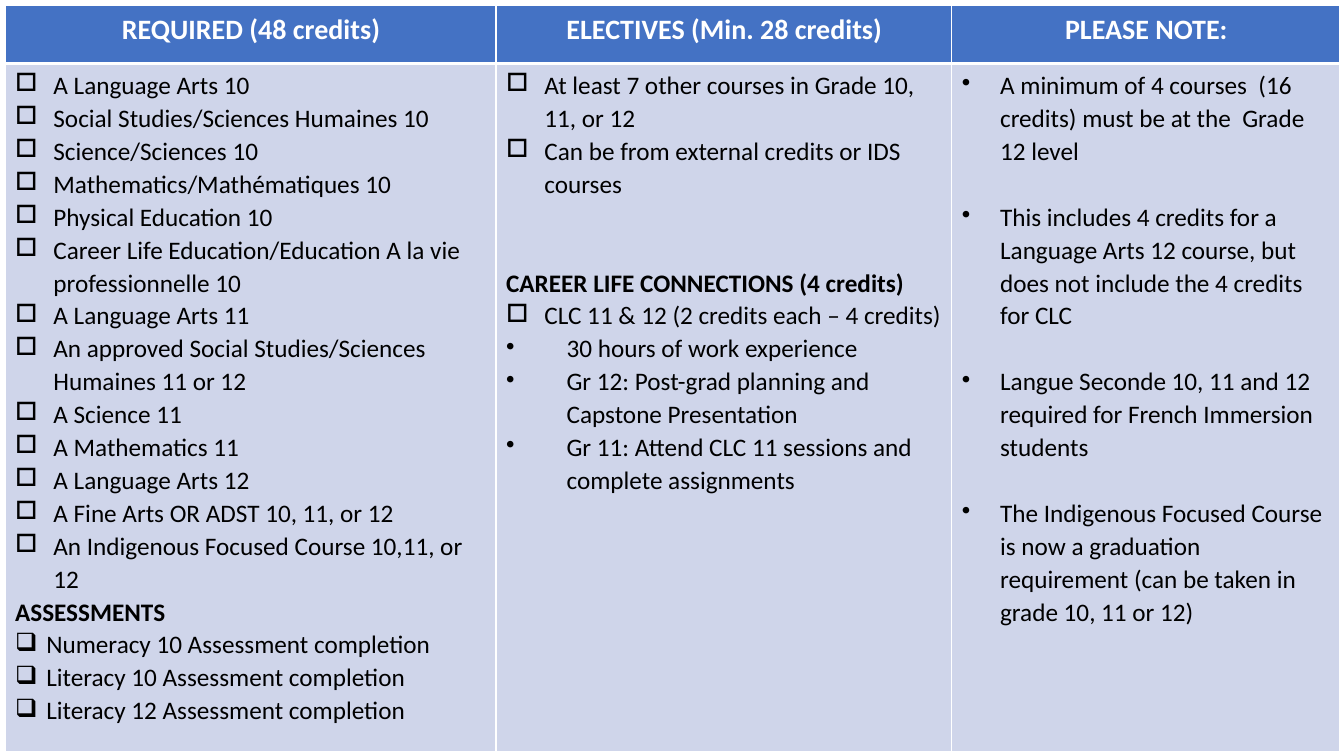
from dataclasses import dataclass

from lxml.etree import SubElement
from pptx import Presentation
from pptx.dml.color import RGBColor
from pptx.enum.text import PP_ALIGN as Align
from pptx.oxml.ns import qn
from pptx.util import Inches, Pt


@dataclass(frozen=True)
class Theme:
    font: str = "Calibri"
    header_fill: str = "4472C4"
    body_fill: str = "CFD5EA"
    header_text: str = "FFFFFF"
    body_text: str = "000000"
    border: str = "FFFFFF"
    header_size: float = 20
    body_size: float = 18
    line_spacing: float = 1.07
    blank_line: float = 23.5
    thin: float = 1
    thick: float = 3


@dataclass(frozen=True)
class Entry:
    text: str
    mark: str = ""
    indent: float = 0
    lines_before: int = 0
    bold: bool = False


THEME = Theme()


def task(text):
    return Entry(text, "□", 0.38)


def assessment(text):
    return Entry(text, "❑", 0.31)


def detail(text):
    return Entry(text, "•", 0.6)


def note(text, lines_before=1):
    return Entry(text, "•", 0.38, lines_before)


def heading(text, lines_before=0):
    return Entry(text, lines_before=lines_before, bold=True)


REQUIRED = [
    *map(task, [
        "A Language Arts 10",
        "Social Studies/Sciences Humaines 10",
        "Science/Sciences 10",
        "Mathematics/Mathématiques 10",
        "Physical Education 10",
        "Career Life Education/Education A la vie professionnelle 10",
        "A Language Arts 11",
        "An approved Social Studies/Sciences Humaines 11 or 12",
        "A Science 11",
        "A Mathematics 11",
        "A Language Arts 12",
        "A Fine Arts OR ADST 10, 11, or 12",
        "An Indigenous Focused Course 10,11, or 12",
    ]),
    heading("ASSESSMENTS"),
    *map(assessment, [
        "Numeracy 10 Assessment completion",
        "Literacy 10 Assessment completion",
        "Literacy 12 Assessment completion",
    ]),
]
ELECTIVES = [
    task("At least 7 other courses in Grade 10, 11, or 12"),
    task("Can be from external credits or IDS courses"),
    heading("CAREER LIFE CONNECTIONS (4 credits)", lines_before=2),
    task("CLC 11 & 12 (2 credits each – 4 credits)"),
    detail("30 hours of work experience"),
    detail("Gr 12: Post-grad planning and Capstone Presentation"),
    detail("Gr 11: Attend CLC 11 sessions and complete assignments"),
]
NOTES = [
    note("A minimum of 4 courses  (16 credits) must be at the  Grade 12 level", 0),
    note("This includes 4 credits for a Language Arts 12 course, "
         "but does not include the 4 credits for CLC"),
    note("Langue Seconde 10, 11 and 12 required for French Immersion students"),
    note("The Indigenous Focused Course is now a graduation requirement "
         "(can be taken in grade 10, 11 or 12)"),
]
COLUMNS = [
    ("REQUIRED (48 credits)", 4.87, REQUIRED),
    ("ELECTIVES (Min. 28 credits)", 4.52, ELECTIVES),
    ("PLEASE NOTE:", 3.85, NOTES),
]


def style_paragraph(para, size, color, bold):
    para.line_spacing = THEME.line_spacing
    para.font.name = THEME.font
    para.font.size = Pt(size)
    para.font.bold = bold
    para.font.color.rgb = RGBColor.from_string(color)


def style_cell(cell, fill, top, bottom):
    cell.margin_right = Inches(0.09)
    properties = cell._tc.get_or_add_tcPr()
    sides = {"L": THEME.thin, "R": THEME.thin, "T": top, "B": bottom}
    for side, width in sides.items():
        line = SubElement(properties, qn(f"a:ln{side}"), w=str(Pt(width)))
        solid = SubElement(line, qn("a:solidFill"))
        SubElement(solid, qn("a:srgbClr"), val=THEME.border)
    cell.fill.solid()
    cell.fill.fore_color.rgb = RGBColor.from_string(fill)


def set_bullet(para, mark, indent):
    properties = para._p.get_or_add_pPr()
    properties.set("marL", str(Inches(indent)))
    properties.set("indent", str(-Inches(indent)))
    SubElement(properties, qn("a:buChar"), char=mark)


def fill_header(cell, title):
    style_cell(cell, THEME.header_fill, THEME.thin, THEME.thick)
    para = cell.text_frame.paragraphs[0]
    para.text = title
    para.alignment = Align.CENTER
    style_paragraph(para, THEME.header_size, THEME.header_text, True)


def fill_body(cell, entries):
    style_cell(cell, THEME.body_fill, THEME.thick, THEME.thin)
    frame = cell.text_frame
    for index, entry in enumerate(entries):
        para = frame.add_paragraph() if index else frame.paragraphs[0]
        para.text = entry.text
        style_paragraph(para, THEME.body_size, THEME.body_text, entry.bold)
        if entry.lines_before:
            para.space_before = Pt(entry.lines_before * THEME.blank_line)
        if entry.mark:
            set_bullet(para, entry.mark, entry.indent)


def add_credit_table(page, left, top, width, height, header_height=0.58):
    box = page.shapes.add_table(
        2, len(COLUMNS), Inches(left), Inches(top), Inches(width), Inches(height))
    table = box.table
    table.rows[0].height = Inches(header_height)
    table.rows[1].height = Inches(height - header_height)
    for index, (title, column_width, entries) in enumerate(COLUMNS):
        table.columns[index].width = Inches(column_width)
        fill_header(table.cell(0, index), title)
        fill_body(table.cell(1, index), entries)


def main():
    deck = Presentation()
    deck.slide_width = Inches(13.33)
    deck.slide_height = Inches(7.5)
    page = deck.slides.add_slide(deck.slide_layouts.get_by_name("Blank"))
    add_credit_table(page, 0.05, 0.05, 13.24, 7.41)
    deck.save("out.pptx")


if __name__ == "__main__":
    main()
